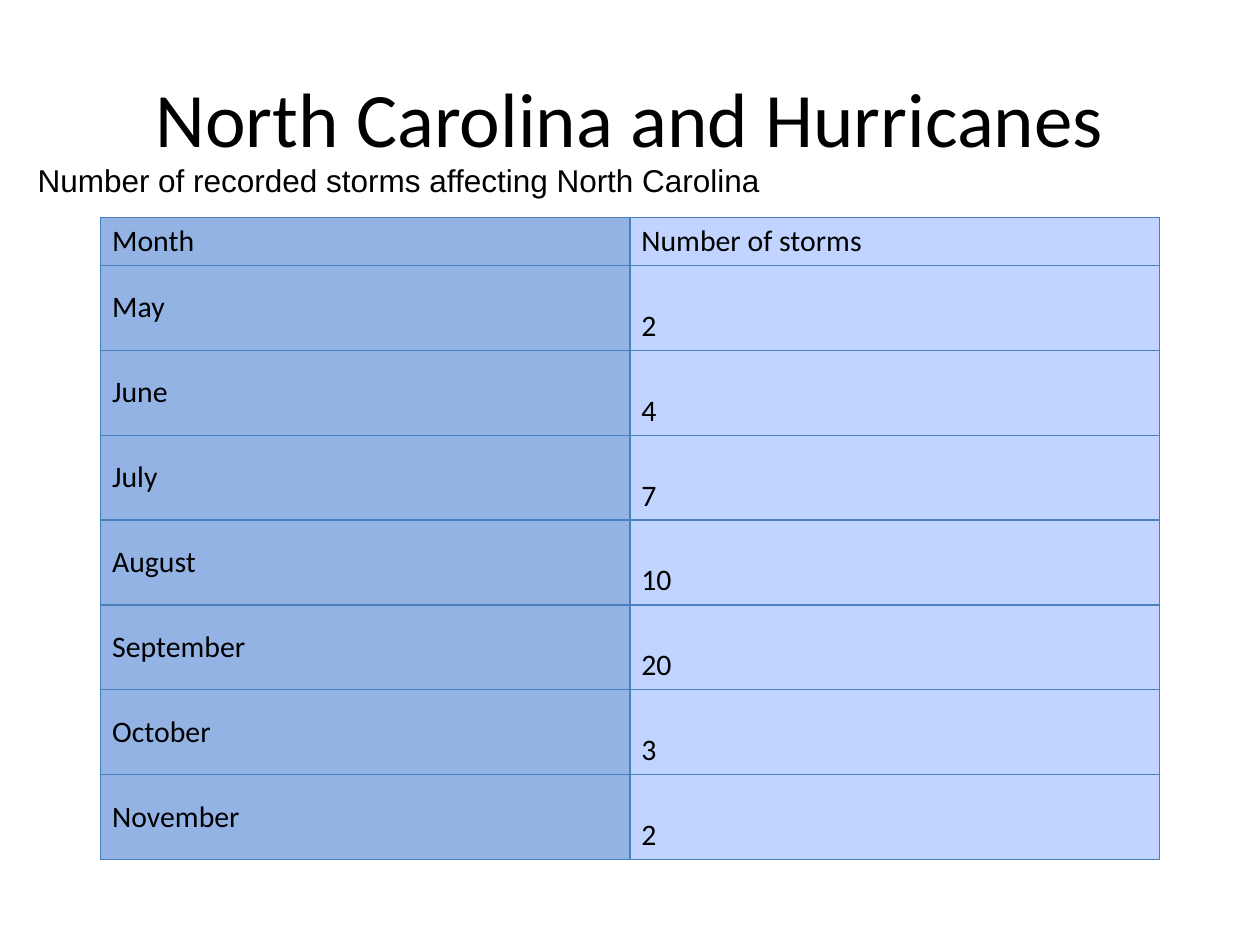
from pptx import Presentation
from pptx.dml.color import RGBColor
from pptx.enum.text import MSO_ANCHOR, PP_ALIGN
from pptx.oxml import parse_xml
from pptx.oxml.ns import nsdecls
from pptx.util import Inches, Pt

BLACK, EDGE = "000000", "4B7EBC"
FILLS = "93B3E5", "C0D4FF"
STORMS = [
    ("Month", "Number of storms"),
    ("May", "2"), ("June", "4"), ("July", "7"), ("August", "10"),
    ("September", "20"), ("October", "3"), ("November", "2"),
]


def color(code):
    return RGBColor.from_string(code)


def write(frame, text, size=17, font="Calibri", ink=BLACK, align=PP_ALIGN.LEFT):
    frame.text = text
    para = frame.paragraphs[0]
    para.alignment = align
    style = para.runs[0].font
    style.size, style.name, style.bold = Pt(size), font, False
    style.color.rgb = color(ink)


def border(cell, code, width):
    props = cell._tc.get_or_add_tcPr()
    for spot, side in enumerate(("lnL", "lnR", "lnT", "lnB")):
        props.insert(spot, parse_xml(
            f'<a:{side} {nsdecls("a")} w="{Pt(width)}"><a:solidFill>'
            f'<a:srgbClr val="{code}"/></a:solidFill></a:{side}>'))


def heading(slide, left, top, width, height):
    title = slide.shapes.title
    title.left, title.top, title.width, title.height = left, top, width, height
    title.text_frame.vertical_anchor = MSO_ANCHOR.MIDDLE
    write(title.text_frame, "North Carolina and Hurricanes", size=44,
          align=PP_ALIGN.CENTER)


def caption(slide, left, top, width, height):
    frame = slide.shapes.add_textbox(left, top, width, height).text_frame
    frame.word_wrap = True
    frame.vertical_anchor = MSO_ANCHOR.MIDDLE
    write(frame, "Number of recorded storms affecting North Carolina",
          size=18, font="Arial")


def storm_table(slide, left, top, width, height):
    table = slide.shapes.add_table(
        len(STORMS), len(FILLS), left, top, width, height).table
    table.first_row = table.horz_banding = False

    # A short header row; the months share the rest equally
    head = Inches(0.38)
    table.rows[0].height = head
    for row in list(table.rows)[1:]:
        row.height = (height - head) // (len(STORMS) - 1)

    for r, record in enumerate(STORMS):
        for c, text in enumerate(record):
            cell = table.cell(r, c)
            cell.fill.solid()
            cell.fill.fore_color.rgb = color(FILLS[c])
            cell.vertical_anchor = MSO_ANCHOR.MIDDLE
            cell.margin_left = cell.margin_right = Inches(0.09)
            # Counts sit one line low in their cells
            low = r > 0 and c == 1
            cell.margin_top = Inches(0.33 if low else 0.04)
            cell.margin_bottom = Inches(0.04)
            write(cell.text_frame, text)
            border(cell, EDGE, 0.75)


def main():
    deck = Presentation()
    deck.slide_width, deck.slide_height = Inches(10), Inches(7.5)
    slide = deck.slides.add_slide(deck.slide_layouts[5])

    def box(*shares):
        sides = (deck.slide_width, deck.slide_height) * 2
        return [int(share * side) for share, side in zip(shares, sides)]

    heading(slide, *box(0.05, 0.04, 0.9, 1 / 6))
    storm_table(slide, *box(0.08, 0.23, 0.84, 0.68))
    caption(slide, *box(0.02, 0.16, 0.96, 0.06))
    deck.save("out.pptx")


if __name__ == "__main__":
    main()
